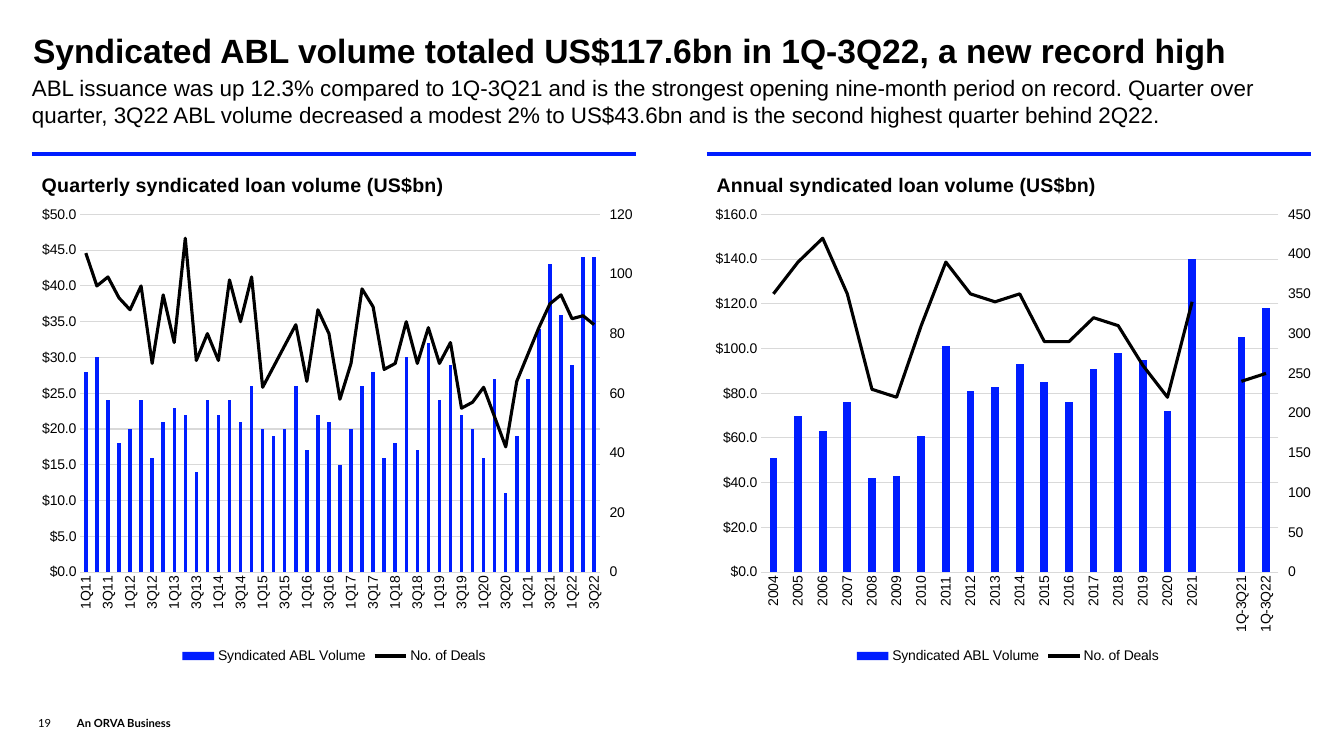
import pptx
import pptx.chart.data
import pptx.dml.color
import pptx.enum.chart
import pptx.enum.shapes
import pptx.enum.text
import pptx.oxml
import pptx.oxml.ns
import pptx.util
from lxml import etree

PX = 9071.43
BLUE, BLACK, GREY = "001DFF", "000000", "D9D9D9"
CHART_NS = 'xmlns:c="http://schemas.openxmlformats.org/drawingml/2006/chart"'
qn = pptx.oxml.ns.qn

QUARTERS = [f"{1 + i % 4}Q{11 + i // 4}" for i in range(47)]
QUARTER_VOLUMES = [
    28, 30, 24, 18, 20, 24, 16, 21, 23, 22, 14, 24, 22, 24, 21, 26,
    20, 19, 20, 26, 17, 22, 21, 15, 20, 26, 28, 16, 18, 30, 17, 32,
    24, 29, 22, 20, 16, 27, 11, 19, 27, 34, 43, 36, 29, 44, 44]
QUARTER_DEALS = [
    107, 96, 99, 92, 88, 96, 70, 93, 77, 112, 71, 80, 71, 98, 84, 99,
    62, 69, 76, 83, 64, 88, 80, 58, 70, 95, 89, 68, 70, 84, 70, 82,
    70, 77, 55, 57, 62, 52, 42, 64, 73, 82, 90, 93, 85, 86, 83]
YEARS = [str(year) for year in range(2004, 2022)] + ["", "1Q-3Q21", "1Q-3Q22"]
YEAR_VOLUMES = [51, 70, 63, 76, 42, 43, 61, 101, 81, 83, 93, 85, 76, 91,
                98, 95, 72, 140, None, 105, 118]
YEAR_DEALS = [350, 390, 420, 350, 230, 220, 310, 390, 350, 340, 350, 290,
              290, 320, 310, 260, 220, 340, None, 240, 250]


def px(length):
    """Turn a length in px into EMU."""
    return pptx.util.Emu(round(length * PX))


def color(value):
    """Turn a hex string into a colour."""
    return pptx.dml.color.RGBColor.from_string(value)


def write(shape, text, size, font="Arial", bold=False, wrap=True, anchor="TOP"):
    """Put one styled paragraph into a shape without insets."""
    frame = shape.text_frame
    frame.text = text
    frame.word_wrap = wrap
    frame.auto_size = pptx.enum.text.MSO_AUTO_SIZE.NONE
    frame.vertical_anchor = pptx.enum.text.MSO_ANCHOR[anchor]
    frame.margin_left = frame.margin_right = 0
    frame.margin_top = frame.margin_bottom = 0
    paragraph = frame.paragraphs[0]
    paragraph.alignment = pptx.enum.text.PP_ALIGN.LEFT
    run_font = paragraph.runs[0].font
    run_font.name, run_font.size, run_font.bold = font, pptx.util.Pt(size), bold
    run_font.color.rgb = color(BLACK)
    return paragraph


def chart_part(chart, tag):
    """Return the first element of a chart with the given tag."""
    return chart.element.find(".//" + qn(tag))


def set_layout(parent, index, inner=False, **places):
    """Give a chart element a manual layout in fractions of the chart."""
    for layout in parent.findall(qn("c:layout")):
        parent.remove(layout)
    target = '<c:layoutTarget val="inner"/>' if inner else ""
    values = "".join(f'<c:{key} val="{value}"/>' for key, value in places.items())
    parent.insert(index, pptx.oxml.parse_xml(
        f'<c:layout {CHART_NS}><c:manualLayout>{target}<c:xMode val="edge"/>'
        f'<c:yMode val="edge"/>{values}</c:manualLayout></c:layout>'))


def move_deals_to_right_axis(chart, top, step):
    """Turn the second series into a line on its own right axis."""
    bars = chart_part(chart, "c:barChart")
    deals = bars.findall(qn("c:ser"))[1]
    for element in deals.findall(qn("c:invertIfNegative")):
        deals.remove(element)
    line_chart = pptx.oxml.parse_xml(
        f'<c:lineChart {CHART_NS}><c:grouping val="standard"/><c:varyColors val="0"/>'
        '<c:marker val="1"/><c:axId val="5001"/><c:axId val="5002"/></c:lineChart>')
    line_chart.insert(2, deals)
    bars.addnext(line_chart)
    category_axis = pptx.oxml.parse_xml(
        f'<c:catAx {CHART_NS}><c:axId val="5001"/><c:scaling><c:orientation val="minMax"/>'
        '</c:scaling><c:delete val="1"/><c:axPos val="b"/><c:crossAx val="5002"/>'
        '<c:crosses val="autoZero"/></c:catAx>')
    deals_axis = pptx.oxml.parse_xml(
        f'<c:valAx {CHART_NS} xmlns:a="http://schemas.openxmlformats.org/drawingml/2006/main">'
        '<c:axId val="5002"/><c:scaling><c:orientation val="minMax"/>'
        f'<c:max val="{top}"/><c:min val="0"/></c:scaling><c:delete val="0"/>'
        '<c:axPos val="r"/><c:numFmt formatCode="General" sourceLinked="0"/>'
        '<c:majorTickMark val="out"/><c:minorTickMark val="none"/>'
        '<c:tickLblPos val="nextTo"/><c:spPr><a:ln><a:noFill/></a:ln></c:spPr>'
        '<c:crossAx val="5001"/><c:crosses val="max"/><c:crossBetween val="between"/>'
        f'<c:majorUnit val="{step}"/></c:valAx>')
    chart_part(chart, "c:valAx").addnext(category_axis)
    category_axis.addnext(deals_axis)


def format_axes(chart, top, step, label_skip):
    """Format the category axis and the dollar axis."""
    categories, dollars = chart.category_axis, chart.value_axis
    for axis in (categories, dollars):
        axis.major_tick_mark = pptx.enum.chart.XL_TICK_MARK.NONE
        axis.tick_labels.font.size = pptx.util.Pt(10)
    categories.has_major_gridlines = False
    dollars.minimum_scale, dollars.maximum_scale = 0, top
    dollars.major_unit = step
    dollars.tick_labels.number_format = '"$"#,##0.0'
    dollars.tick_labels.number_format_is_linked = False
    dollars.format.line.fill.background()
    for grey_line in (categories.format.line, dollars.major_gridlines.format.line):
        grey_line.color.rgb = color(GREY)
        grey_line.width = pptx.util.Pt(0.75)
    axis_element = chart_part(chart, "c:catAx")
    body = axis_element.find(qn("c:txPr")).find(qn("a:bodyPr"))
    body.set("rot", "-5400000")
    body.set("vert", "horz")
    skip = pptx.oxml.parse_xml(f'<c:tickLblSkip {CHART_NS} val="{label_skip}"/>')
    axis_element.find(qn("c:noMultiLvlLbl")).addprevious(skip)


def add_panel(slide, box, title, data, dollars, deals, plot, label_skip):
    """Add a blue rule with a combined column and line chart below it."""
    left, top, width, height = box
    rule = slide.shapes.add_connector(
        pptx.enum.shapes.MSO_CONNECTOR.STRAIGHT, px(left), px(top), px(left + width), px(top))
    rule.line.color.rgb = color(BLUE)
    rule.line.width = pptx.util.Pt(3)
    etree.SubElement(rule.element.spPr, qn("a:effectLst"))

    names, volumes, counts = data
    chart_data = pptx.chart.data.CategoryChartData()
    chart_data.categories = names
    chart_data.add_series("Syndicated ABL Volume", volumes)
    chart_data.add_series("No. of Deals", counts)
    chart = slide.shapes.add_chart(
        pptx.enum.chart.XL_CHART_TYPE.COLUMN_STACKED, px(left), px(top + 10),
        px(width), px(height - 10), chart_data).chart
    chart.font.name, chart.font.size = "Arial", pptx.util.Pt(10)
    chart.font.color.rgb = color(BLACK)

    chart.has_title = True
    write(chart.chart_title, title, 14, bold=True)
    set_layout(chart_part(chart, "c:title"), 1, x=0.01, y=0.01)
    chart.has_legend = True
    chart.legend.position = pptx.enum.chart.XL_LEGEND_POSITION.BOTTOM
    chart.legend.include_in_layout = False
    chart.legend.font.size = pptx.util.Pt(10)

    format_axes(chart, *dollars, label_skip)
    move_deals_to_right_axis(chart, *deals)
    set_layout(chart_part(chart, "c:plotArea"), 0, True, x=plot[0], y=0.1, w=plot[1], h=0.71)

    columns, lines = chart.plots
    columns.gap_width, columns.overlap = 219, 100
    columns.vary_by_categories = False
    volume_fill = columns.series[0].format.fill
    volume_fill.solid()
    volume_fill.fore_color.rgb = color(BLUE)
    deal_line = lines.series[0]
    deal_line.smooth = False
    deal_line.marker.style = pptx.enum.chart.XL_MARKER_STYLE.NONE
    deal_line.format.line.color.rgb = color(BLACK)
    deal_line.format.line.width = pptx.util.Pt(2.25)


def add_heading(slide, left, top, width):
    """Place the title and the summary below it."""
    title = slide.shapes.title
    title.left, title.top, title.width, title.height = px(left), px(top), px(width), px(39)
    paragraph = write(
        title, "Syndicated ABL volume totaled US$117.6bn in 1Q-3Q22, a new record high",
        24, bold=True)
    paragraph.line_spacing = 0.9
    summary = slide.shapes.add_textbox(px(left - 1), px(top + 40), px(width), px(57))
    write(summary, "ABL issuance was up 12.3% compared to 1Q-3Q21 and is the strongest opening "
          "nine-month period on record. Quarter over quarter, 3Q22 ABL volume decreased a "
          "modest 2% to US$43.6bn and is the second highest quarter behind 2Q22.", 16)


def add_footer(slide, left, top):
    """Place the page number and the business line."""
    number = slide.shapes.add_textbox(px(left), px(top), px(39), px(20))
    write(number, "19", 8, "Lato", wrap=False, anchor="BOTTOM")
    business = slide.shapes.add_textbox(px(left + 39), px(top), px(174), px(20))
    write(business, "An ORVA Business", 8, "Lato", bold=True, anchor="BOTTOM")


def main():
    """Build and save the slide."""
    presentation = pptx.Presentation()
    presentation.slide_width, presentation.slide_height = px(1344), px(756)
    slide = presentation.slides.add_slide(presentation.slide_layouts[5])
    add_heading(slide, 33, 34, 1278)
    add_panel(slide, (32, 154, 604, 514), "Quarterly syndicated loan volume (US$bn)",
              (QUARTERS, QUARTER_VOLUMES, QUARTER_DEALS), (50, 5), (120, 20), (0.08, 0.86), 2)
    add_panel(slide, (707, 154, 604, 514), "Annual syndicated loan volume (US$bn)",
              (YEARS, YEAR_VOLUMES, YEAR_DEALS), (160, 20), (450, 50), (0.09, 0.86), 1)
    add_footer(slide, 38, 710)
    presentation.save("out.pptx")


if __name__ == "__main__":
    main()
